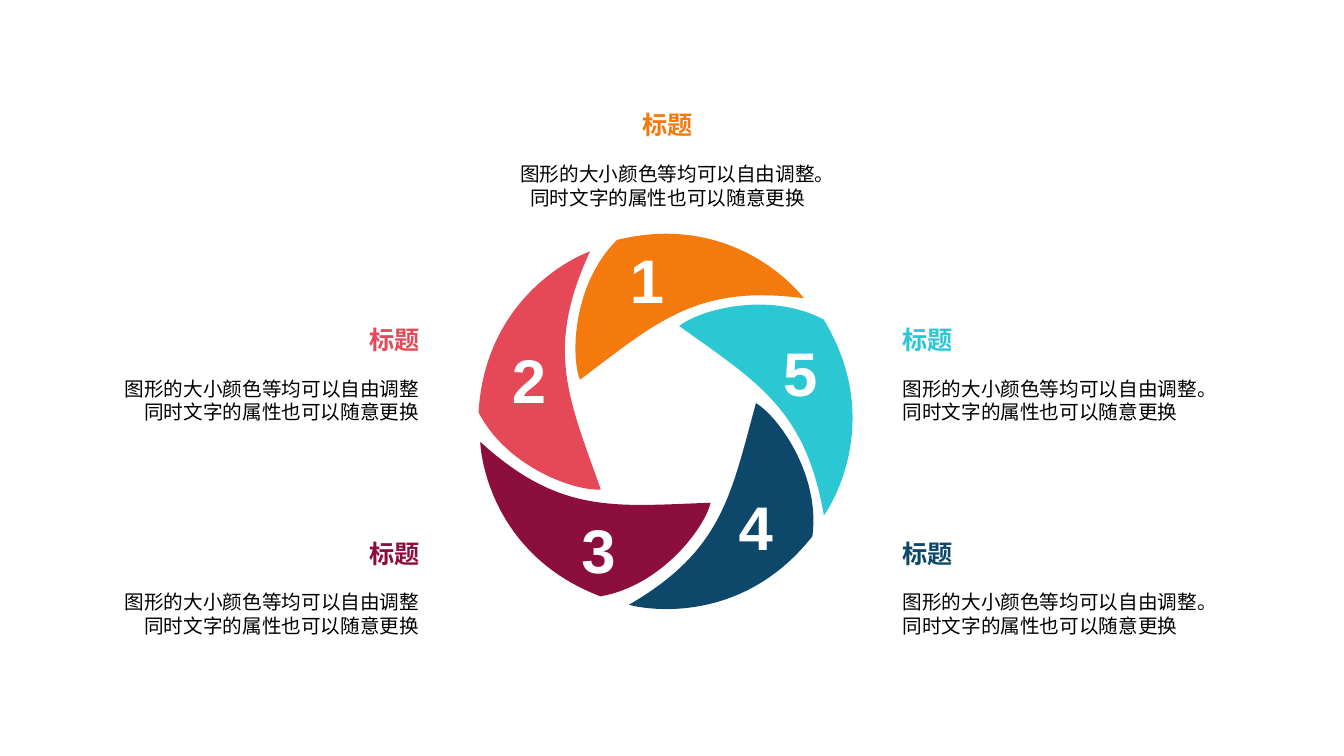
"""Build a five-blade aperture diagram with a captioned heading for each blade."""
from dataclasses import dataclass
from math import cos, radians, sin

from lxml import etree
from pptx import Presentation
from pptx import util as u
from pptx.dml.color import RGBColor
from pptx.enum import text
from pptx.oxml.ns import qn

CELL = u.Inches(0.1)
COLUMNS, ROWS = 133.33, 75

ORANGE = RGBColor(0xF4, 0x7A, 0x0D)
RED = RGBColor(0xE5, 0x48, 0x57)
WINE = RGBColor(0x8C, 0x0E, 0x3D)
NAVY = RGBColor(0x0D, 0x47, 0x69)
CYAN = RGBColor(0x2B, 0xC8, 0xD4)
WHITE = RGBColor(0xFF, 0xFF, 0xFF)
BLACK = RGBColor(0, 0, 0)

HUB = (66.03, 41.78)
ORBIT, SPIN = 72, 72.6
BLADE_AT, BLADE_SIZE = (62.4, 40), (18.3, 20.4)
BLADE_START = (62.4, 60)
BLADE_CURVES = (
    ((71.7, 54.6), (72.5, 49.1), (75, 40)),
    ((77.2, 41.3), (81.4, 47.1), (80.6, 53.2)),
    ((74, 61.6), (65, 60.7), BLADE_START),
)

HEADING_SIZE = (7, 4)
BODY_SIZE = (31.6, 5.7)
DIGIT_SIZE = (5.4, 8.4)
HEADING_ROWS = (10.4, 31.72, 52.87)
BODY_DROP = 5.17

OPEN_BODY = "图形的大小颜色等均可以自由调整。同时文字的属性也可以随意更换"
SPACED_BODY = "图形的大小颜色等均可以自由调整 同时文字的属性也可以随意更换"


@dataclass(frozen=True)
class Side:
    """A text column: its left edge, the heading's share of free width, alignment and wording."""
    column: float
    share: float
    align: text.PP_ALIGN
    body: str


@dataclass(frozen=True)
class Step:
    """One numbered blade with its caption."""
    digit: str
    color: RGBColor
    digit_at: tuple[float, float]
    side: Side
    level: int


LEFT = Side(11, 1, text.PP_ALIGN.RIGHT, SPACED_BODY)
MIDDLE = Side(50.45, 0.5, text.PP_ALIGN.CENTER, OPEN_BODY)
RIGHT = Side(88.55, 0, text.PP_ALIGN.LEFT, OPEN_BODY)

STEPS_IN_TURN = (
    Step("4", NAVY, (72.3, 48), RIGHT, 2),
    Step("3", WINE, (56.7, 50.3), LEFT, 2),
    Step("2", RED, (49.8, 33.4), LEFT, 1),
    Step("1", ORANGE, (61.5, 23.5), MIDDLE, 0),
    Step("5", CYAN, (76.7, 32.7), RIGHT, 1),
)


def grid(cells: float) -> u.Emu:
    """Turn grid cells into a length."""
    return u.Emu(round(cells * CELL))


def bend_sides(blade) -> None:
    """Turn the straight sides of a blade into Bézier curves."""
    outline = next(blade._element.iter(qn("a:path")))
    for name, cells in zip("wh", BLADE_SIZE):
        outline.set(name, str(grid(cells)))
    for side, curve in zip(outline.findall(qn("a:lnTo")), BLADE_CURVES):
        bend = etree.Element(qn("a:cubicBezTo"))
        for point in curve:
            x, y = (str(grid(p - corner)) for p, corner in zip(point, BLADE_AT))
            etree.SubElement(bend, qn("a:pt"), x=x, y=y)
        outline.replace(side, bend)


def add_blade(page, color: RGBColor, index: int) -> None:
    """Draw a blade carried round the hub and turned on its centre."""
    builder = page.shapes.build_freeform(*map(grid, BLADE_START))
    corners = [tuple(map(grid, curve[-1])) for curve in BLADE_CURVES]
    builder.add_line_segments(corners, close=True)
    blade = builder.convert_to_shape()
    bend_sides(blade)
    dx, dy = (at + size / 2 - hub for at, size, hub in zip(BLADE_AT, BLADE_SIZE, HUB))
    turn = radians(index * ORBIT)
    x = HUB[0] + dx * cos(turn) - dy * sin(turn)
    y = HUB[1] + dx * sin(turn) + dy * cos(turn)
    width, height = BLADE_SIZE
    layout = {"left": x - width / 2, "top": y - height / 2, "width": width, "height": height}
    for name, cells in layout.items():
        setattr(blade, name, grid(cells))
    blade.rotation = index * SPIN
    blade.shadow.inherit = False
    blade.fill.solid()
    blade.fill.fore_color.rgb = color
    blade.line.fill.background()


def add_label(page, words: str, at: tuple[float, float], size: tuple[float, float],
              points: int, color: RGBColor, bold: bool, wrap: bool,
              align: text.PP_ALIGN = text.PP_ALIGN.LEFT) -> None:
    """Place one paragraph of text on the grid."""
    box = page.shapes.add_textbox(*map(grid, at + size))
    frame = box.text_frame
    frame.word_wrap = wrap
    frame.auto_size = text.MSO_AUTO_SIZE.SHAPE_TO_FIT_TEXT
    para = frame.paragraphs[0]
    para.alignment = align
    span = para.add_run()
    span.text = words
    span.font.color.rgb = color
    for name, value in {"name": "Arial", "size": u.Pt(points), "bold": bold}.items():
        setattr(span.font, name, value)


def add_caption(page, step: Step) -> None:
    """Write a step's heading, body and digit."""
    side = step.side
    row = HEADING_ROWS[step.level]
    heading_column = side.column + side.share * (BODY_SIZE[0] - HEADING_SIZE[0])
    add_label(page, "标题", (heading_column, row), HEADING_SIZE, 18, step.color,
              True, False, side.align)
    add_label(page, side.body, (side.column, row + BODY_DROP), BODY_SIZE, 14, BLACK,
              False, True, side.align)
    add_label(page, step.digit, step.digit_at, DIGIT_SIZE, 44, WHITE, True, False)


def main() -> None:
    """Build and save the deck."""
    deck = Presentation()
    deck.slide_width, deck.slide_height = grid(COLUMNS), grid(ROWS)
    page = deck.slides.add_slide(deck.slide_layouts[6])
    for index, step in enumerate(STEPS_IN_TURN):
        add_blade(page, step.color, index)
    for step in STEPS_IN_TURN:
        add_caption(page, step)
    deck.save("out.pptx")


if __name__ == "__main__":
    main()
